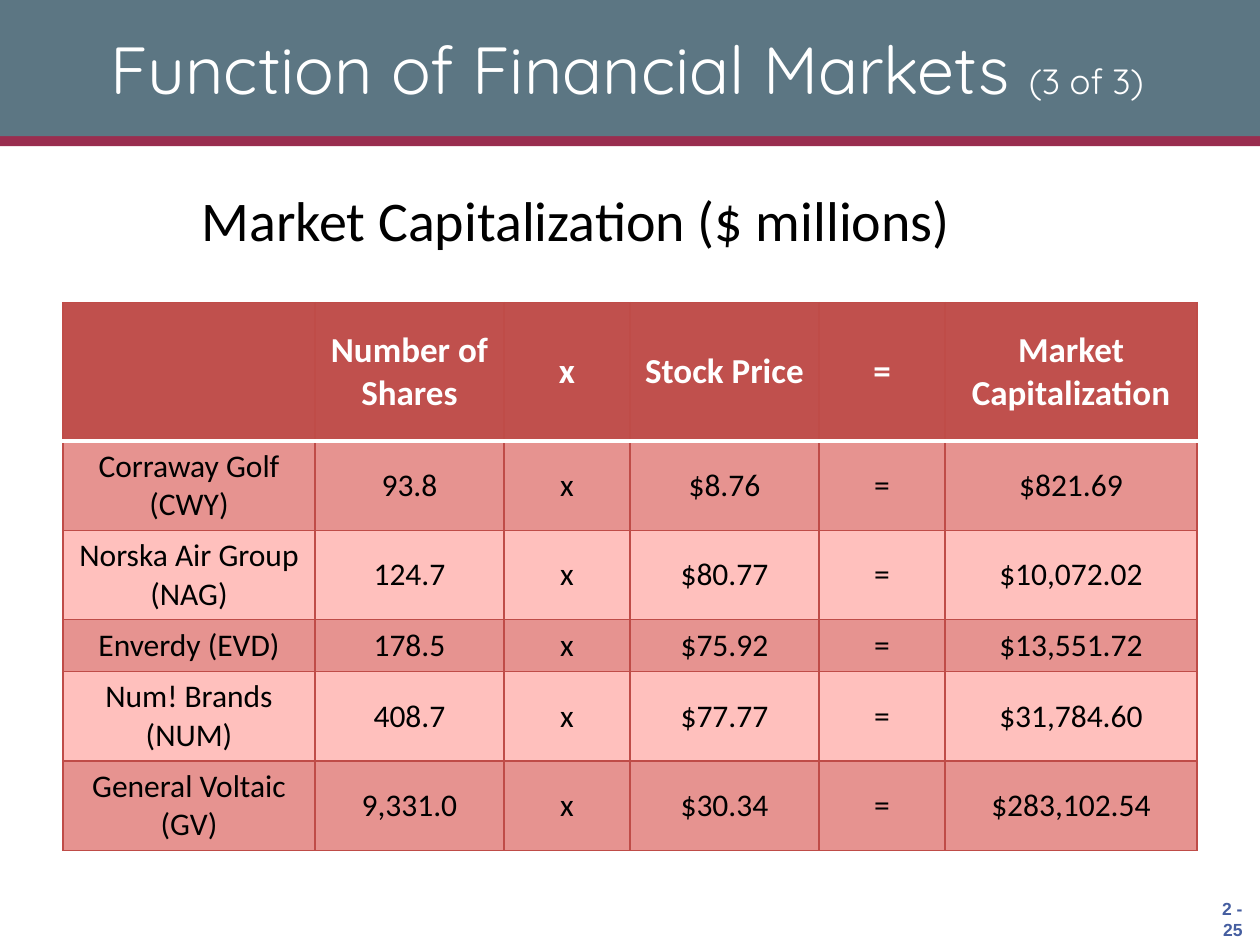
from lxml.etree import SubElement
from pptx import Presentation
from pptx.dml.color import RGBColor
from pptx.enum.shapes import MSO_SHAPE
from pptx.enum.text import MSO_ANCHOR, PP_ALIGN
from pptx.oxml.ns import qn
from pptx.util import Inches, Pt

WHITE = RGBColor(0xFF, 0xFF, 0xFF)
BLACK = RGBColor(0x00, 0x00, 0x00)
SLATE = RGBColor(0x5C, 0x76, 0x83)
WINE = RGBColor(0x99, 0x2D, 0x4F)
BLUE = RGBColor(0x45, 0x5E, 0xA0)
RED = RGBColor(0xC0, 0x50, 0x4D)
GRID = RGBColor(0xBF, 0x4C, 0x48)
ROSE = RGBColor(0xE6, 0x93, 0x90)
PINK = RGBColor(0xFF, 0xC0, 0xBD)

HEADERS = ["", "Number of Shares", "x", "Stock Price", "=", "Market Capitalization"]
COMPANIES = [
    ("Corraway Golf (CWY)", "93.8", "$8.76", "$821.69"),
    ("Norska Air Group (NAG)", "124.7", "$80.77", "$10,072.02"),
    ("Enverdy (EVD)", "178.5", "$75.92", "$13,551.72"),
    ("Num! Brands (NUM)", "408.7", "$77.77", "$31,784.60"),
    ("General Voltaic (GV)", "9,331.0", "$30.34", "$283,102.54"),
]
COLUMN_WIDTHS = [2, 1.5, 1, 1.5, 1, 2]
ROW_HEIGHTS = [1.1, 0.71, 0.71, 0.41, 0.71, 0.71]


class SlideBuilder:
    """Holds the text styles and the current slide, and adds elements to it."""

    styles = {
        "title": {"name": "Quicksand", "size": Pt(38), "color": WHITE},
        "count": {"name": "Quicksand", "size": Pt(20), "color": WHITE},
        "body": {"name": "Calibri", "size": Pt(32), "color": BLACK},
        "number": {"name": "Arial", "size": Pt(10), "color": BLUE, "bold": True},
        "header": {"name": "Calibri", "size": Pt(20), "color": WHITE, "bold": True},
        "cell": {"name": "Calibri", "size": Pt(18), "color": BLACK, "bold": False},
    }

    def __init__(self, page):
        self.page = page

    def add_span(self, para, text, style):
        span = para.add_run()
        span.text = text
        for key, value in self.styles[style].items():
            if key == "color":
                span.font.color.rgb = value
            else:
                setattr(span.font, key, value)

    def band(self, top, height, color):
        shape = self.page.shapes.add_shape(
            MSO_SHAPE.RECTANGLE, 0, Inches(top), Inches(10), Inches(height))
        shape.shadow.inherit = False
        shape.fill.solid()
        shape.fill.fore_color.rgb = color
        shape.line.fill.background()

    def text(self, left, top, width, height, spans, align, anchor, wrap=True):
        box = self.page.shapes.add_textbox(
            Inches(left), Inches(top), Inches(width), Inches(height))
        frame = box.text_frame
        for key, value in {"word_wrap": wrap, "vertical_anchor": anchor}.items():
            setattr(frame, key, value)
        para = frame.paragraphs[0]
        para.alignment = align
        for text, style in spans:
            self.add_span(para, text, style)

    def border(self, cell, side, color, width):
        line = SubElement(cell._tc.get_or_add_tcPr(), qn(f"a:ln{side}"), w=str(Pt(width)))
        fill = SubElement(line, qn("a:solidFill"))
        SubElement(fill, qn("a:srgbClr"), val=str(color))

    def table(self, left, top, rows, widths, heights):
        table = self.page.shapes.add_table(
            len(rows), len(widths), Inches(left), Inches(top),
            Inches(sum(widths)), Inches(sum(heights))).table
        for column, width in zip(table.columns, widths):
            column.width = Inches(width)
        for row, height in zip(table.rows, heights):
            row.height = Inches(height)
        for index, values in enumerate(rows):
            style = "cell" if index else "header"
            color = (ROSE if index % 2 else PINK) if index else RED
            for position, value in enumerate(values):
                self.fill_cell(table.cell(index, position), index, value, style, color)

    def fill_cell(self, cell, index, value, style, color):
        white_side = {0: "B", 1: "T"}.get(index)
        for side in "LRTB":
            self.border(cell, side, *((WHITE, 2) if side == white_side else (GRID, 0.75)))
        cell.fill.solid()
        cell.fill.fore_color.rgb = color
        cell.vertical_anchor = MSO_ANCHOR.MIDDLE
        para = cell.text_frame.paragraphs[0]
        para.alignment = PP_ALIGN.CENTER
        if value:
            self.add_span(para, value, style)


def main():
    deck = Presentation()
    deck.slide_width, deck.slide_height = Inches(10), Inches(7.5)
    builder = SlideBuilder(deck.slides.add_slide(deck.slide_layouts[6]))
    builder.band(1.08, 0.08, WINE)
    builder.band(0, 1.08, SLATE)
    builder.text(9.46, 7.08, 0.5, 0.42, [("2 - 25", "number")],
                 PP_ALIGN.RIGHT, MSO_ANCHOR.MIDDLE, wrap=False)
    builder.text(0.25, 0.08, 9.46, 0.92,
                 [("Function of Financial Markets ", "title"), ("(3 of 3)", "count")],
                 PP_ALIGN.CENTER, MSO_ANCHOR.MIDDLE)
    builder.text(1.5, 1.42, 8.5, 5, [("Market Capitalization ($ millions)", "body")],
                 PP_ALIGN.LEFT, MSO_ANCHOR.TOP)
    rows = [HEADERS] + [[company, shares, "x", price, "=", value]
                        for company, shares, price, value in COMPANIES]
    builder.table(0.5, 2.4, rows, COLUMN_WIDTHS, ROW_HEIGHTS)
    deck.save("out.pptx")


if __name__ == "__main__":
    main()
